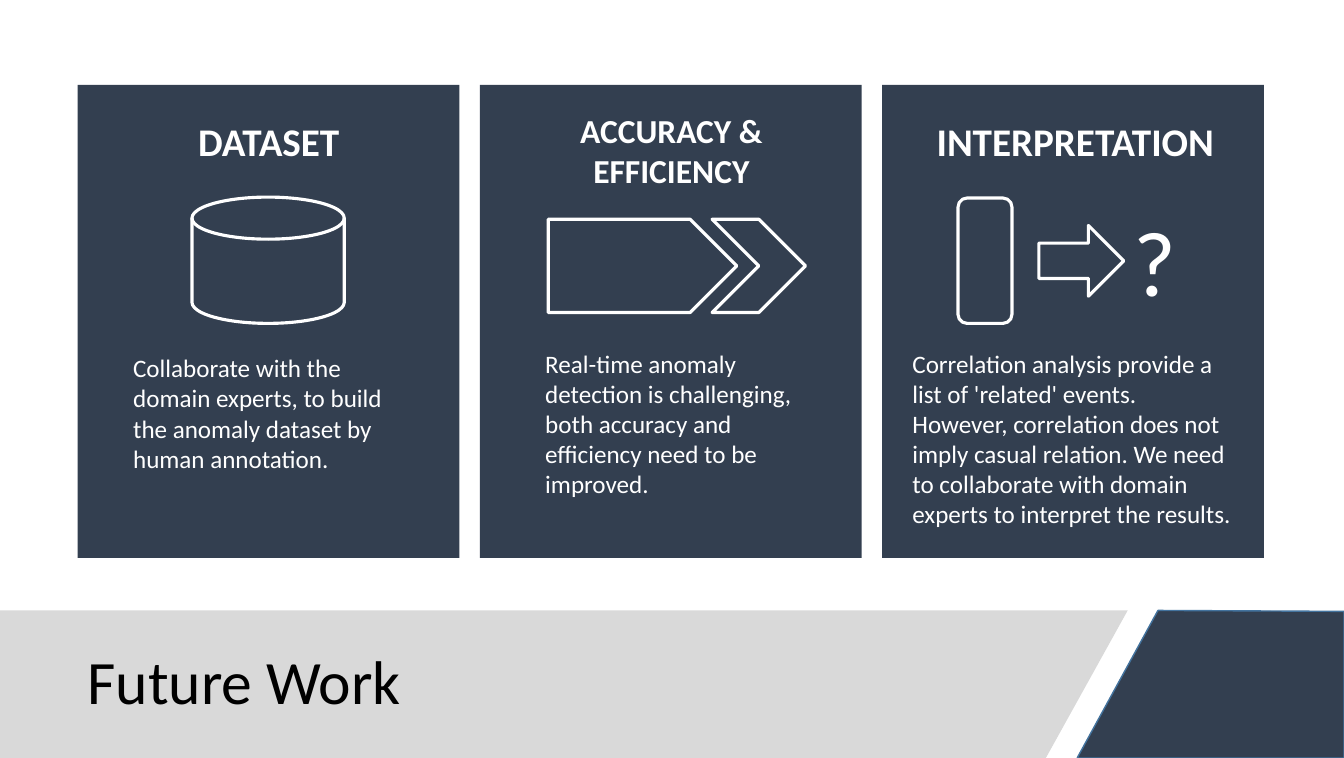
from dataclasses import dataclass

from pptx import Presentation
from pptx.dml.color import RGBColor
from pptx.enum.shapes import MSO_SHAPE
from pptx.enum.text import MSO_ANCHOR, MSO_AUTO_SIZE, PP_ALIGN
from pptx.shapes.autoshape import Shape
from pptx.slide import Slide
from pptx.util import Pt

FONT = "Calibri"
NAVY, GREY, WHITE, BLACK = "333F50", "D9D9D9", "FFFFFF", "000000"
EDGE_BLUE = "43739E"
SLIDE_WIDTH, SLIDE_HEIGHT = 957.6, 540
FOOTER_TOP = 434.9
CARD_LEFT, CARD_TOP, CARD_WIDTH, CARD_HEIGHT = 55.4, 60.5, 272, 337
CARD_STEP = 286.6
BODY_SIZE = 17.9


@dataclass(frozen=True)
class Box:
    left: float
    top: float
    width: float
    height: float

    def lengths(self) -> tuple[Pt, Pt, Pt, Pt]:
        return Pt(self.left), Pt(self.top), Pt(self.width), Pt(self.height)


@dataclass(frozen=True)
class Icon:
    kind: MSO_SHAPE
    box: Box


@dataclass(frozen=True)
class Card:
    heading: tuple[str, ...]
    heading_size: float
    heading_box: Box
    body: str
    body_box: Box
    icons: tuple[Icon, ...]


CARDS = (
    Card(
        ("DATASET",), 27.9, Box(83.5, 79.9, 216, 41),
        "Collaborate with the domain experts, to build the anomaly dataset "
        "by human annotation.",
        Box(87.8, 247.7, 216, 94.3),
        (Icon(MSO_SHAPE.FLOWCHART_MAGNETIC_DISK, Box(136.8, 140.4, 108.5, 90)),),
    ),
    Card(
        ("ACCURACY &", "EFFICIENCY"), 23.9, Box(342.7, 74.9, 271.4, 65.5),
        "Real-time anomaly detection is challenging, both accuracy and "
        "efficiency need to be improved.",
        Box(381.4, 244.4, 206, 116),
        (
            Icon(MSO_SHAPE.CHEVRON, Box(507.4, 156.2, 66.5, 66.5)),
            Icon(MSO_SHAPE.PENTAGON, Box(390.7, 156.2, 134.3, 66.5)),
        ),
    ),
    Card(
        ("INTERPRETATION",), 27.9, Box(650.2, 79.9, 231.8, 41),
        "Correlation analysis provide a list of 'related' events. However, "
        "correlation does not imply casual relation. We need to collaborate "
        "with domain experts to interpret the results.",
        Box(643, 244.4, 245.5, 137.5),
        (
            Icon(MSO_SHAPE.FLOWCHART_ALTERNATE_PROCESS, Box(682.6, 141.1, 38.4, 89.3)),
            Icon(MSO_SHAPE.RIGHT_ARROW, Box(740.2, 160.6, 60.5, 50.4)),
        ),
    ),
)


def color(value: str) -> RGBColor:
    return RGBColor.from_string(value)


def style(shape: Shape, fill: str | None = None, line: str | None = None,
          line_width: float = 1) -> None:
    shape.shadow.inherit = False
    if fill:
        shape.fill.solid()
        shape.fill.fore_color.rgb = color(fill)
    else:
        shape.fill.background()
    if line:
        shape.line.color.rgb = color(line)
        shape.line.width = Pt(line_width)
    else:
        shape.line.fill.background()


def add_polygon(slide: Slide, points: list[tuple[float, float]],
                fill: str, line: str | None = None) -> None:
    start, *rest = [(Pt(x), Pt(y)) for x, y in points]
    builder = slide.shapes.build_freeform(*start)
    builder.add_line_segments(rest, close=True)
    style(builder.convert_to_shape(), fill, line)


def add_text(slide: Slide, box: Box, lines: tuple[str, ...], size: float,
             text_color: str = WHITE, bold: bool = False,
             align: PP_ALIGN = PP_ALIGN.LEFT, wrap: bool = True) -> Shape:
    shape = slide.shapes.add_textbox(*box.lengths())
    frame = shape.text_frame
    frame.word_wrap = wrap
    frame.auto_size = MSO_AUTO_SIZE.SHAPE_TO_FIT_TEXT
    for index, line in enumerate(lines):
        paragraph = frame.add_paragraph() if index else frame.paragraphs[0]
        paragraph.alignment = align
        run = paragraph.add_run()
        run.text = line
        run.font.name = FONT
        run.font.size = Pt(size)
        run.font.bold = bold
        run.font.color.rgb = color(text_color)
    return shape


def add_footer(slide: Slide) -> None:
    add_polygon(slide, [(825.1, FOOTER_TOP), (767.5, SLIDE_HEIGHT),
                        (SLIDE_WIDTH, SLIDE_HEIGHT), (SLIDE_WIDTH, 435.6)],
                NAVY, EDGE_BLUE)
    add_polygon(slide, [(803.5, FOOTER_TOP), (745.2, SLIDE_HEIGHT),
                        (0, SLIDE_HEIGHT), (0, FOOTER_TOP)], GREY)
    title = add_text(slide, Box(55.4, 435.6, 693.4, 104.4), ("Future Work",),
                     43.9, BLACK)
    title.text_frame.auto_size = MSO_AUTO_SIZE.NONE
    title.text_frame.vertical_anchor = MSO_ANCHOR.MIDDLE
    title.text_frame.paragraphs[0].line_spacing = 0.9


def add_card(slide: Slide, card: Card, left: float) -> None:
    panel = Box(left, CARD_TOP, CARD_WIDTH, CARD_HEIGHT)
    style(slide.shapes.add_shape(MSO_SHAPE.RECTANGLE, *panel.lengths()), NAVY)
    add_text(slide, card.heading_box, card.heading, card.heading_size,
             bold=True, align=PP_ALIGN.CENTER)
    for icon in card.icons:
        shape = slide.shapes.add_shape(icon.kind, *icon.box.lengths())
        style(shape, line=WHITE, line_width=2.25)
    add_text(slide, card.body_box, (card.body,), BODY_SIZE)


def main() -> None:
    presentation = Presentation()
    presentation.slide_width = Pt(SLIDE_WIDTH)
    presentation.slide_height = Pt(SLIDE_HEIGHT)
    slide = presentation.slides.add_slide(presentation.slide_layouts[6])
    add_footer(slide)
    for index, card in enumerate(CARDS):
        add_card(slide, card, CARD_LEFT + index * CARD_STEP)
    add_text(slide, Box(800.6, 141.8, 45.4, 87.1), ("?",), 65.8, wrap=False)
    presentation.save("out.pptx")


if __name__ == "__main__":
    main()
